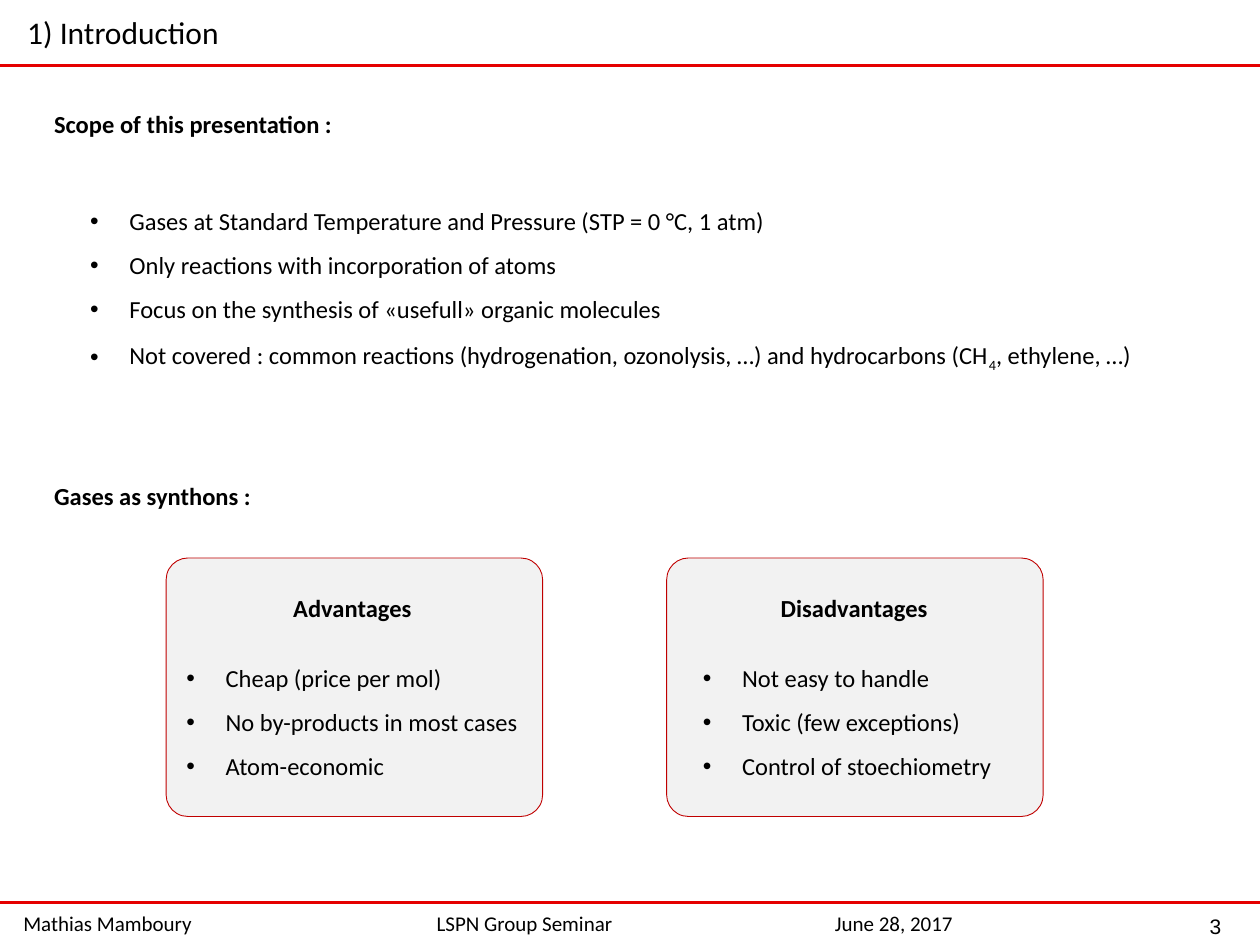
from lxml.etree import SubElement
from pptx import Presentation
from pptx.dml.color import RGBColor
from pptx.enum.shapes import MSO_CONNECTOR, MSO_SHAPE
from pptx.enum.text import MSO_ANCHOR, MSO_AUTO_SIZE, PP_ALIGN
from pptx.oxml.ns import qn
from pptx.util import Cm, Pt

WIDTH, HEIGHT = 25.4, 19.05
BULLET_INDENT = 0.79


def color(value):
    return RGBColor.from_string(value)


def add_bullet(paragraph):
    properties = paragraph._p.get_or_add_pPr()
    properties.set("marL", str(Cm(BULLET_INDENT)))
    properties.set("indent", str(-Cm(BULLET_INDENT)))
    SubElement(properties, qn("a:buFont"), typeface="Arial")
    SubElement(properties, qn("a:buChar"), char="•")


def add_text(slide, text, left, top, width, height, size=14, font="Calibri",
             bold=False, align=PP_ALIGN.LEFT, wrap=False, grow=True,
             anchor=MSO_ANCHOR.TOP, bullets=False):
    """Add a text box; each line is a paragraph, and _x_ marks a subscript."""
    shape = slide.shapes.add_textbox(Cm(left), Cm(top), Cm(width), Cm(height))
    frame = shape.text_frame
    frame.word_wrap = wrap
    frame.auto_size = MSO_AUTO_SIZE.SHAPE_TO_FIT_TEXT if grow else MSO_AUTO_SIZE.NONE
    frame.vertical_anchor = anchor
    for number, line in enumerate(text.split("\n")):
        paragraph = frame.add_paragraph() if number else frame.paragraphs[0]
        paragraph.alignment = align
        if bullets:
            paragraph.line_spacing = 1.5
            add_bullet(paragraph)
        for position, part in enumerate(line.split("_")):
            run = paragraph.add_run()
            run.text = part
            run.font.size = Pt(size)
            run.font.name = font
            run.font.bold = bold
            run.font.color.rgb = color("000000")
            if position % 2:
                run._r.get_or_add_rPr().set("baseline", "-25000")
    return shape


def add_rule(slide, top):
    line = slide.shapes.add_connector(
        MSO_CONNECTOR.STRAIGHT, Cm(0), Cm(top), Cm(WIDTH), Cm(top))
    line.line.color.rgb = color("E50000")
    line.line.width = Pt(1.5)
    SubElement(line._element.spPr, qn("a:effectLst"))


def add_card(slide, left, title, title_left, items, items_left, items_width):
    card = slide.shapes.add_shape(
        MSO_SHAPE.ROUNDED_RECTANGLE, Cm(left), Cm(11.25), Cm(7.59), Cm(5.21))
    card.adjustments[0] = 0.084
    card.shadow.inherit = False
    card.fill.solid()
    card.fill.fore_color.rgb = color("F2F2F2")
    card.line.color.rgb = color("C00000")
    card.line.width = Pt(0.5)
    add_text(slide, title, title_left, 11.84, 7.72, 0.86, bold=True,
             align=PP_ALIGN.CENTER, wrap=True)
    add_text(slide, items, items_left, 12.95, items_width, 2.95, bullets=True)


def main():
    presentation = Presentation()
    presentation.slide_width, presentation.slide_height = Cm(WIDTH), Cm(HEIGHT)
    slide = presentation.slides.add_slide(presentation.slide_layouts[6])

    # Header
    add_rule(slide, 1.32)
    add_text(slide, "1) Introduction", 0.3, 0.13, 4.42, 1.02, size=18)

    # Scope
    add_text(slide, "Scope of this presentation :", 0.84, 2.08, 6.15, 0.86, bold=True)
    add_text(slide,
             "Gases at Standard Temperature and Pressure (STP = 0 °C, 1 atm)\n"
             "Only reactions with incorporation of atoms\n"
             "Focus on the synthesis of «usefull» organic molecules\n"
             "Not covered : common reactions (hydrogenation, ozonolysis, …) "
             "and hydrocarbons (CH_4_, ethylene, …)",
             1.57, 3.73, 21.59, 3.84, bullets=True)

    # Advantages and disadvantages
    add_text(slide, "Gases as synthons :", 0.84, 9.58, 4.5, 0.86, bold=True)
    add_card(slide, 3.35, "Advantages ", 3.3,
             "Cheap (price per mol)\nNo by-products in most cases\nAtom-economic",
             3.51, 7.26)
    add_card(slide, 13.44, "Disadvantages", 13.36,
             "Not easy to handle\nToxic (few exceptions)\nControl of stoechiometry",
             13.92, 6.38)

    # Footer
    add_rule(slide, 18.19)
    for text, left, width in (("Mathias Mamboury", 0.2, 3.94),
                              ("LSPN Group Seminar", 8.53, 4.09),
                              ("June 28, 2017", 16.56, 2.92)):
        add_text(slide, text, left, 18.24, width, 0.76, size=12,
                 align=PP_ALIGN.CENTER)
    add_text(slide, "3", 24, 18.16, 1, 1.02, size=12, font="Arial",
             align=PP_ALIGN.CENTER, wrap=True, grow=False,
             anchor=MSO_ANCHOR.MIDDLE)

    presentation.save("out.pptx")


if __name__ == "__main__":
    main()
